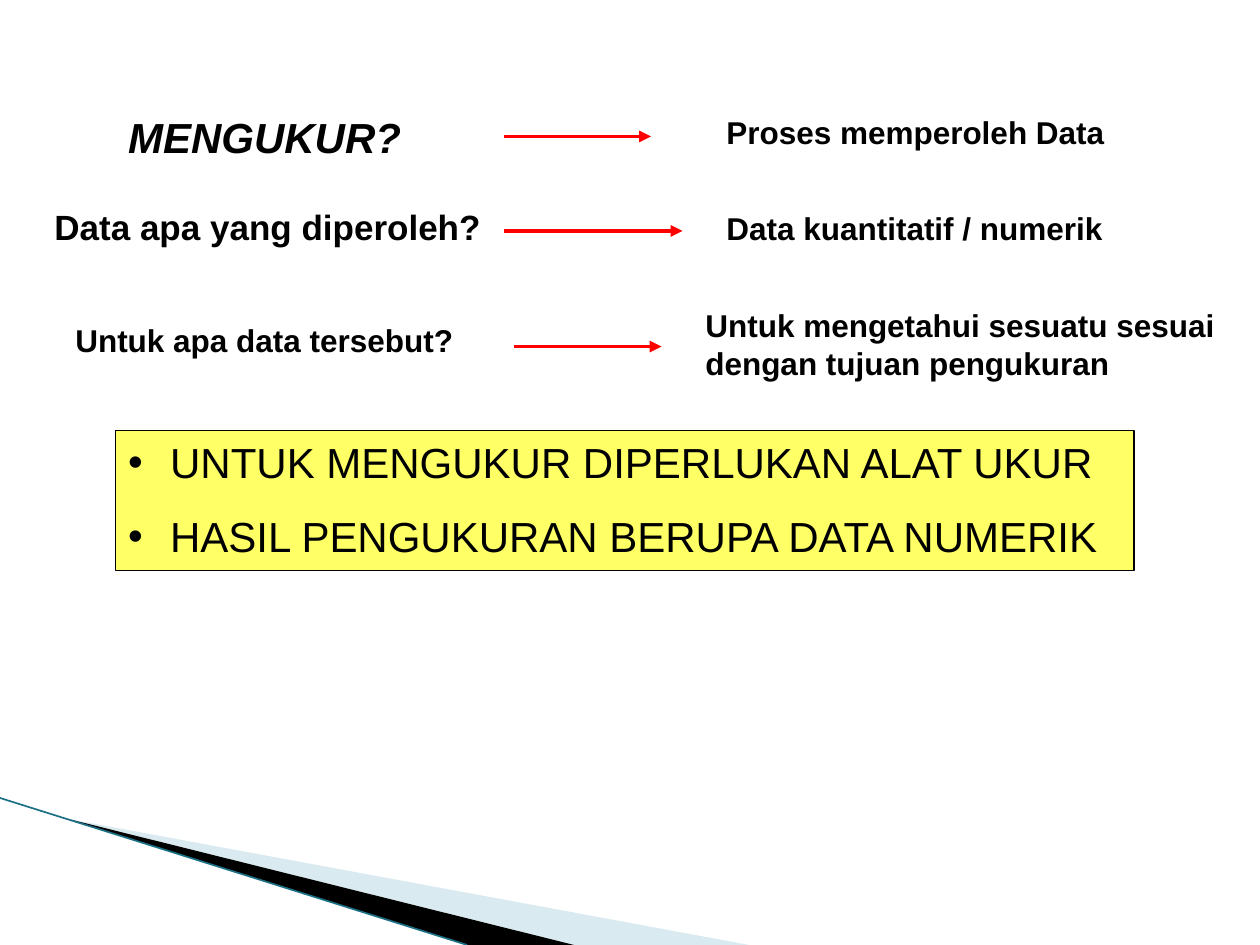
from lxml.etree import SubElement
from pptx import Presentation
from pptx.dml.color import RGBColor
from pptx.enum.shapes import MSO_CONNECTOR
from pptx.enum.text import MSO_ANCHOR, MSO_AUTO_SIZE, PP_ALIGN
from pptx.oxml.ns import qn
from pptx.util import Pt

BLACK, RED, YELLOW, TEAL, PALE_BLUE = "000000", "FF0000", "FFFF66", "1B7085", "A0CBDC"

# Question and answer rows: (text, box, size), then the arrow as (left, right, y)
ROWS = [
    (("MENGUKUR?", (66, 60, 192, 36), 24),
     ("Proses memperoleh Data", (408, 61, 252, 29), 18), (288, 372, 78)),
    (("Data apa yang diperoleh?", (24, 114, 264, 31), 20),
     ("Data kuantitatif / numerik", (408, 116, 234, 29), 18), (288, 390, 132)),
    (("Untuk apa data tersebut?", (36, 180, 246, 29), 18),
     ("Untuk mengetahui sesuatu sesuai dengan tujuan pengukuran",
      (396, 171.5, 306, 50), 18), (294, 378, 198)),
]
CONCLUSIONS = ["UNTUK MENGUKUR DIPERLUKAN ALAT UKUR",
               "HASIL PENGUKURAN BERUPA DATA NUMERIK"]


def color(value):
    return RGBColor.from_string(value)


def set_attributes(target, values):
    for name, value in values.items():
        setattr(target, name, value)


def place(shape, box):
    names = ("left", "top", "width", "height")
    set_attributes(shape, {name: Pt(value) for name, value in zip(names, box)})


def write(shape, texts, size, gap=0, bullet_indent=0, **font):
    frame = shape.text_frame
    set_attributes(frame, {"word_wrap": True, "auto_size": MSO_AUTO_SIZE.NONE,
                           "vertical_anchor": MSO_ANCHOR.TOP})
    for index, text in enumerate(texts):
        para = frame.paragraphs[0] if index == 0 else frame.add_paragraph()
        set_attributes(para, {"alignment": PP_ALIGN.LEFT,
                              "space_before": Pt(gap if index else 0)})
        if bullet_indent:
            properties = para._p.get_or_add_pPr()
            properties.set("marL", str(Pt(bullet_indent)))
            properties.set("indent", str(-Pt(bullet_indent)))
            SubElement(properties, qn("a:buFont"), typeface="Arial")
            SubElement(properties, qn("a:buChar"), char="•")
        span = para.add_run()
        span.text = text
        set_attributes(span.font, {"name": "Arial", "size": Pt(size), **font})
        span.font.color.rgb = color(BLACK)


def add_line(page, start, end, line_color, width, arrow=False):
    line = page.shapes.add_connector(
        MSO_CONNECTOR.STRAIGHT, *(Pt(value) for value in (*start, *end)))
    line.line.color.rgb = color(line_color)
    line.line.width = Pt(width)
    if arrow:
        SubElement(line.line._get_or_add_ln(), qn("a:tailEnd"), type="triangle")
    SubElement(line._element.spPr, qn("a:effectLst"))


def add_wedge(page, points, fill_color, opacity=100):
    builder = page.shapes.build_freeform(*points[0], scale=float(Pt(1)))
    builder.add_line_segments(points[1:], close=True)
    wedge = builder.convert_to_shape()
    wedge.shadow.inherit = False
    wedge.fill.solid()
    wedge.fill.fore_color.rgb = color(fill_color)
    wedge.line.fill.background()
    if opacity < 100:
        fill = wedge._element.spPr.find(qn("a:solidFill"))
        SubElement(fill[0], qn("a:alpha"), val=str(opacity * 1000))


def add_corner(page, box):
    """Sloping bands in the lower left corner."""
    left, top, width, height = box
    bottom = top + height
    tip = (left + 39, top + 12.5)
    add_wedge(page, [tip, (left + 428, bottom), (left + 328, bottom)], PALE_BLUE, 40)
    add_wedge(page, [tip, (left + 328, bottom), (left + width, bottom)], BLACK)
    add_line(page, (left, top), (left + width, bottom), TEAL, 0.95)


def add_row(page, question, answer, arrow, is_title):
    """A question, an arrow and its answer."""
    for part, as_title in ((question, is_title), (answer, False)):
        text, box, size = part
        if as_title:
            shape = page.shapes.title
            place(shape, box)
        else:
            shape = page.shapes.add_textbox(*(Pt(value) for value in box))
        write(shape, [text], size, bold=True, italic=as_title)
    left, right, y = arrow
    add_line(page, (left, y), (right, y), RED, 2.25, arrow=True)


def add_conclusions(page, box):
    """Yellow panel with the bulleted conclusions."""
    panel = page.placeholders[1]
    place(panel, box)
    panel.fill.solid()
    panel.fill.fore_color.rgb = color(YELLOW)
    panel.line.color.rgb = color(BLACK)
    panel.line.width = Pt(0.75)
    write(panel, CONCLUSIONS, 24, gap=13.5, bullet_indent=24)


def main():
    deck = Presentation()
    set_attributes(deck, {"slide_width": Pt(720), "slide_height": Pt(540)})
    page = deck.slides.add_slide(deck.slide_layouts[1])
    add_corner(page, (0, 456, 267, 84))
    for index, row in enumerate(ROWS):
        add_row(page, *row, is_title=index == 0)
    add_conclusions(page, (66, 246, 582, 80))
    deck.save("out.pptx")


if __name__ == "__main__":
    main()
